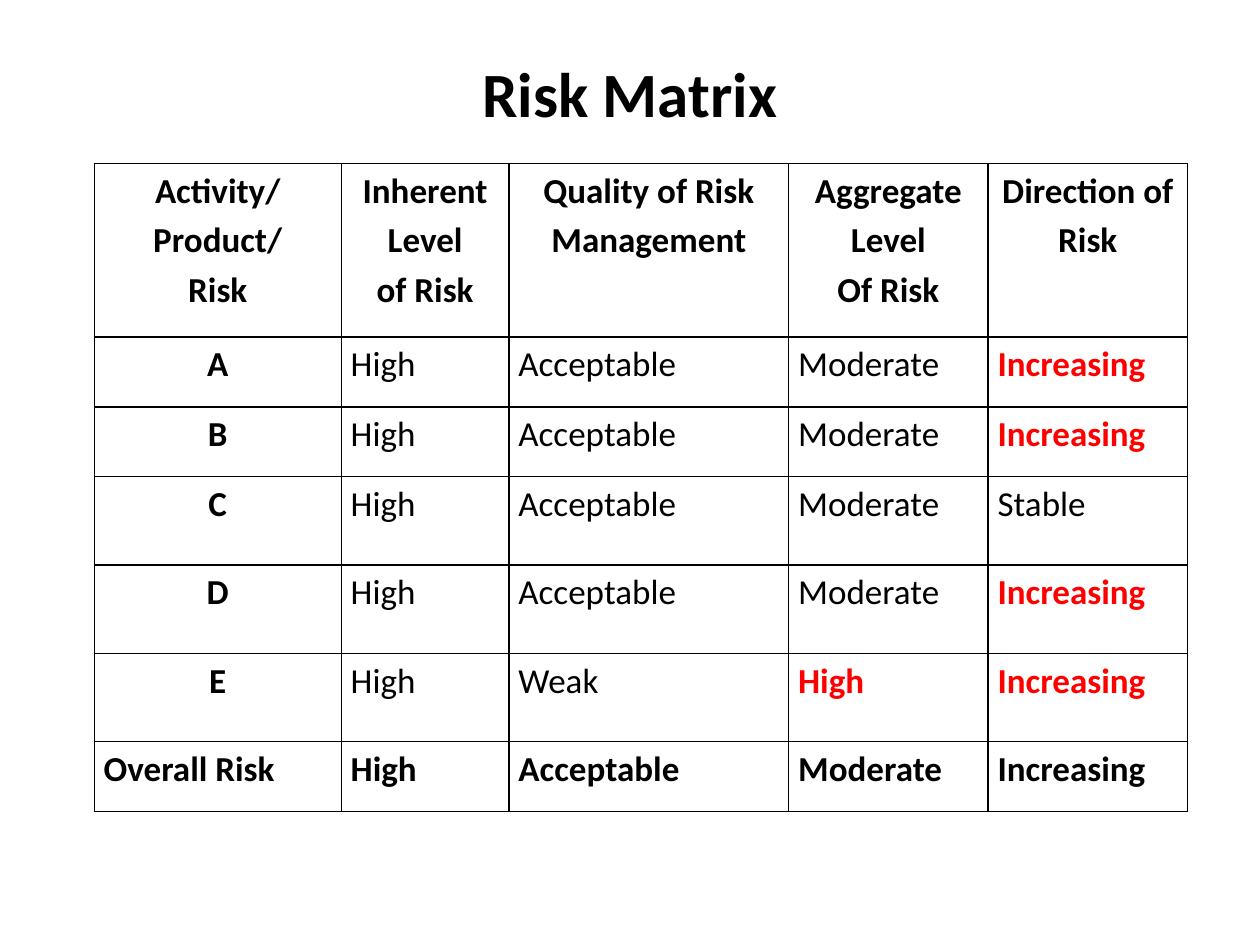
from lxml import etree
from pptx import Presentation
from pptx.dml.color import RGBColor
from pptx.enum import text
from pptx.oxml import ns
from pptx.util import Cm, Pt

COLORS = {"ink": "000000", "alert": "FF0000", "paper": "FFFFFF"}
HEADINGS = ["Activity/\nProduct/\nRisk", "Inherent Level\nof Risk",
            "Quality of Risk Management", "Aggregate Level\nOf Risk",
            "Direction of Risk"]
RATINGS = [
    ["A", "High", "Acceptable", "Moderate", "Increasing"],
    ["B", "High", "Acceptable", "Moderate", "Increasing"],
    ["C", "High", "Acceptable", "Moderate", "Stable"],
    ["D", "High", "Acceptable", "Moderate", "Increasing"],
    ["E", "High", "Weak", "High", "Increasing"],
]
OVERALL = ["Overall Risk", "High", "Acceptable", "Moderate", "Increasing"]
COLUMN_WIDTHS = [4.98, 3.38, 5.64, 4.02, 4.02]
ROW_HEIGHTS = [3.49, 1.41, 1.41, 1.78, 1.78, 1.78, 1.41]


class Deck:
    font = "Calibri"
    title_size = 36
    cell_size = 20
    line_spacing = 1.15
    cell_margin = 0.19
    border_width = 1

    def __init__(self, width, height):
        self.presentation = Presentation()
        self.presentation.slide_width = Cm(width)
        self.presentation.slide_height = Cm(height)
        blank = self.presentation.slide_layouts[6]
        self.slide = self.presentation.slides.add_slide(blank)

    def set_words(self, frame, words, size, bold, color, centered):
        frame.text = words
        for paragraph in frame.paragraphs:
            paragraph.alignment = (text.PP_ALIGN.CENTER if centered
                                   else text.PP_ALIGN.LEFT)
            for run in paragraph.runs:
                run.font.name = self.font
                run.font.size = Pt(size)
                run.font.bold = bold
                run.font.color.rgb = RGBColor.from_string(COLORS[color])

    def title(self, words, left, top, width, height):
        box = self.slide.shapes.add_textbox(Cm(left), Cm(top), Cm(width), Cm(height))
        frame = box.text_frame
        frame.word_wrap = True
        frame.vertical_anchor = text.MSO_ANCHOR.MIDDLE
        self.set_words(frame, words, self.title_size, True, "ink", True)

    def border(self, cell):
        properties = cell._tc.get_or_add_tcPr()
        for position, side in enumerate(("lnL", "lnR", "lnT", "lnB")):
            line = etree.Element(ns.qn(f"a:{side}"), w=str(Pt(self.border_width)))
            fill = etree.SubElement(line, ns.qn("a:solidFill"))
            etree.SubElement(fill, ns.qn("a:srgbClr"), val=COLORS["ink"])
            properties.insert(position, line)

    def cell(self, cell, words, bold, color, centered):
        cell.fill.solid()
        cell.fill.fore_color.rgb = RGBColor.from_string(COLORS["paper"])
        cell.margin_left = cell.margin_right = Cm(self.cell_margin)
        cell.margin_top = cell.margin_bottom = 0
        self.set_words(cell.text_frame, words, self.cell_size, bold, color, centered)
        for paragraph in cell.text_frame.paragraphs:
            paragraph.line_spacing = self.line_spacing
        self.border(cell)

    def matrix(self, left, top, headings, ratings, overall):
        rows = [headings, *ratings, overall]
        table = self.slide.shapes.add_table(
            len(rows), len(headings), Cm(left), Cm(top),
            Cm(sum(COLUMN_WIDTHS)), Cm(sum(ROW_HEIGHTS))).table
        table.first_row = table.horz_banding = False
        for column, width in zip(table.columns, COLUMN_WIDTHS):
            column.width = Cm(width)
        for row, height in zip(table.rows, ROW_HEIGHTS):
            row.height = Cm(height)
        last = len(rows) - 1
        for r, row in enumerate(rows):
            for c, words in enumerate(row):
                rating = 0 < r < last and c > 0
                alert = rating and (words == "Increasing" or (c == 3 and words == "High"))
                self.cell(table.cell(r, c), words,
                          bold=alert or not rating,
                          color="alert" if alert else "ink",
                          centered=r == 0 or (c == 0 and r < last))

    def save(self):
        self.presentation.save("out.pptx")


def main():
    deck = Deck(25.4, 19.05)
    deck.title("Risk Matrix", 1.27, 0.76, 22.86, 2.21)
    deck.matrix(1.9, 3.3, HEADINGS, RATINGS, OVERALL)
    deck.save()


if __name__ == "__main__":
    main()
